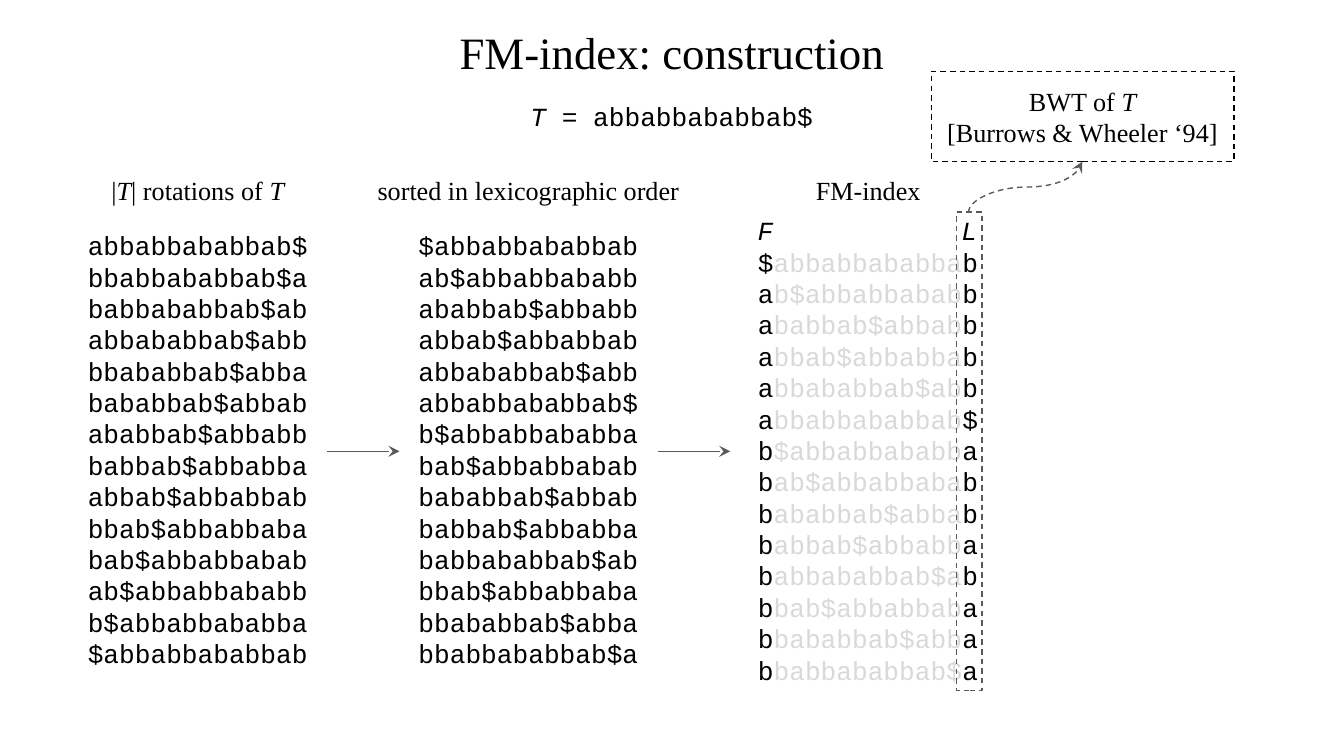
"""Build a slide that shows how the FM-index of a text is constructed."""
import dataclasses

import lxml.etree
import pptx
import pptx.dml.color
import pptx.enum.dml
import pptx.enum.shapes
import pptx.enum.text
import pptx.oxml.ns
import pptx.util

Cm = pptx.util.Cm
Dash = pptx.enum.dml.MSO_LINE.DASH
Align = pptx.enum.text.PP_ALIGN
Connector = pptx.enum.shapes.MSO_CONNECTOR


@dataclasses.dataclass(frozen=True)
class Theme:
    """Fonts, type sizes in points and colours of the deck."""
    serif: str = "Times New Roman"
    mono: str = "Courier New"
    title: float = 24
    body: float = 14
    ink: str = "000000"
    faded: str = "D9D9D9"
    rule: str = "595959"
    stroke: float = 0.75


THEME = Theme()
TEXT = "abbabbababbab$"
INSET = 0.25


def color(value):
    """Return the colour object for a hex value."""
    return pptx.dml.color.RGBColor.from_string(value)


def add_span(para, text, font, size=THEME.body, ink=THEME.ink, italic=False):
    """Append one formatted run to a paragraph."""
    span = para.add_run()
    span.text = text
    span.font.name = font
    span.font.size = pptx.util.Pt(size)
    span.font.italic = italic
    span.font.color.rgb = color(ink)


def set_frame(frame, side=INSET):
    """Wrap the text and set the insets of a text frame."""
    frame.word_wrap = True
    frame.margin_left = frame.margin_right = Cm(side)
    frame.margin_top = frame.margin_bottom = Cm(INSET)


def fill_frame(frame, lines, font, side=INSET):
    """Write centred lines, each a list of (text, run options)."""
    set_frame(frame, side)
    for index, line in enumerate(lines):
        para = frame.add_paragraph() if index else frame.paragraphs[0]
        para.alignment = Align.CENTER
        for text, options in line:
            add_span(para, text, font, **options)


def add_text(page, left, top, width, height, lines, font, side=INSET):
    """Add a text box and return it."""
    box = page.shapes.add_textbox(Cm(left), Cm(top), Cm(width), Cm(height))
    fill_frame(box.text_frame, lines, font, side)
    return box


def add_dashed_box(page, left, top, width, height, ink):
    """Add an unfilled rectangle with a dashed outline."""
    box = page.shapes.add_shape(pptx.enum.shapes.MSO_SHAPE.RECTANGLE,
                                Cm(left), Cm(top), Cm(width), Cm(height))
    box.shadow.inherit = False
    box.fill.background()
    box.line.color.rgb = color(ink)
    box.line.width = pptx.util.Pt(THEME.stroke)
    box.line.dash_style = Dash
    return box


def add_arrow(page, kind, start, end):
    """Add a connector with a stealth arrowhead at its end."""
    arrow = page.shapes.add_connector(kind, *map(Cm, start + end))
    arrow.line.color.rgb = color(THEME.rule)
    arrow.line.width = pptx.util.Pt(THEME.stroke)
    qn = pptx.oxml.ns.qn
    lxml.etree.SubElement(arrow.line._get_or_add_ln(), qn("a:tailEnd"), type="stealth")
    lxml.etree.SubElement(arrow._element.spPr, qn("a:effectLst"))
    return arrow


def add_title(page, text):
    """Place and format the title placeholder."""
    title = page.shapes.title
    title.left, title.top, title.width, title.height = map(Cm, (0.86, 0.18, 23.67, 1.6))
    frame = title.text_frame
    set_frame(frame)
    frame.vertical_anchor = pptx.enum.text.MSO_ANCHOR.MIDDLE
    frame.paragraphs[0].alignment = Align.CENTER
    add_span(frame.paragraphs[0], text, THEME.serif, THEME.title)


def add_heading(page, center, width, line):
    """Add a column heading centred on a given position."""
    add_text(page, center - width / 2, 3.05, width, 1.12, [line], THEME.serif)


def add_index(page, rows):
    """Add the index column with its F and L header and faded middle."""
    faded = {"ink": THEME.faded}
    lines = [[("F\tL", {"italic": True})]]
    lines += [[(row[0], {}), (row[1:-1], faded), (row[-1], {})] for row in rows]
    box = add_text(page, 13.79, 3.81, 5.23, 9.5, lines, THEME.mono, side=0.53)
    header = box.text_frame.paragraphs[0]
    header.alignment = Align.LEFT
    qn = pptx.oxml.ns.qn
    stops = lxml.etree.SubElement(header._p.get_or_add_pPr(), qn("a:tabLst"))
    lxml.etree.SubElement(stops, qn("a:tab"), pos=str(Cm(3.85)), algn="l")


def add_callout(page):
    """Frame the L column and link it to its explanation."""
    add_dashed_box(page, 18.08, 4.01, 0.48, 9.04, THEME.rule)
    note = add_dashed_box(page, 17.6, 1.35, 5.72, 1.7, THEME.ink)
    lines = [[("BWT of ", {}), ("T", {"italic": True})],
             [("[Burrows & Wheeler ‘94]", {})]]
    fill_frame(note.text_frame, lines, THEME.serif)
    curve = add_arrow(page, Connector.CURVE, (18.9, 2.46), (19.86, 4.61))
    curve.line.dash_style = Dash
    curve._element.spPr.xfrm.set("rot", str(270 * 60000))


def main():
    """Build and save the deck."""
    deck = pptx.Presentation()
    deck.slide_width, deck.slide_height = Cm(25.4), Cm(14.29)
    page = deck.slides.add_slide(deck.slide_layouts[5])
    italic = {"italic": True}
    add_title(page, "FM-index: construction")
    add_text(page, 9.73, 1.65, 5.94, 1.12,
             [[("T", italic), (f" = {TEXT}", {})]], THEME.mono)

    rotations = [TEXT[i:] + TEXT[:i] for i in range(len(TEXT))]
    ordered = sorted(rotations)
    width, gap, left = 4.88, 1.37, 1.3
    for rows in (rotations, ordered):
        add_text(page, left, 4.09, width, 8.89, [[(row, {})] for row in rows], THEME.mono)
        add_arrow(page, Connector.STRAIGHT, (left + width, 8.53), (left + width + gap, 8.53))
        left += width + gap
    add_index(page, ordered)

    add_heading(page, 3.74, 4.27, [("|", {}), ("T", italic),
                                   ("| rotations of ", {}), ("T", italic)])
    add_heading(page, 9.99, 6.83, [("sorted in lexicographic order", {})])
    add_heading(page, 16.41, 2.59, [("FM-index", {})])
    add_callout(page)
    deck.save("out.pptx")


if __name__ == "__main__":
    main()
